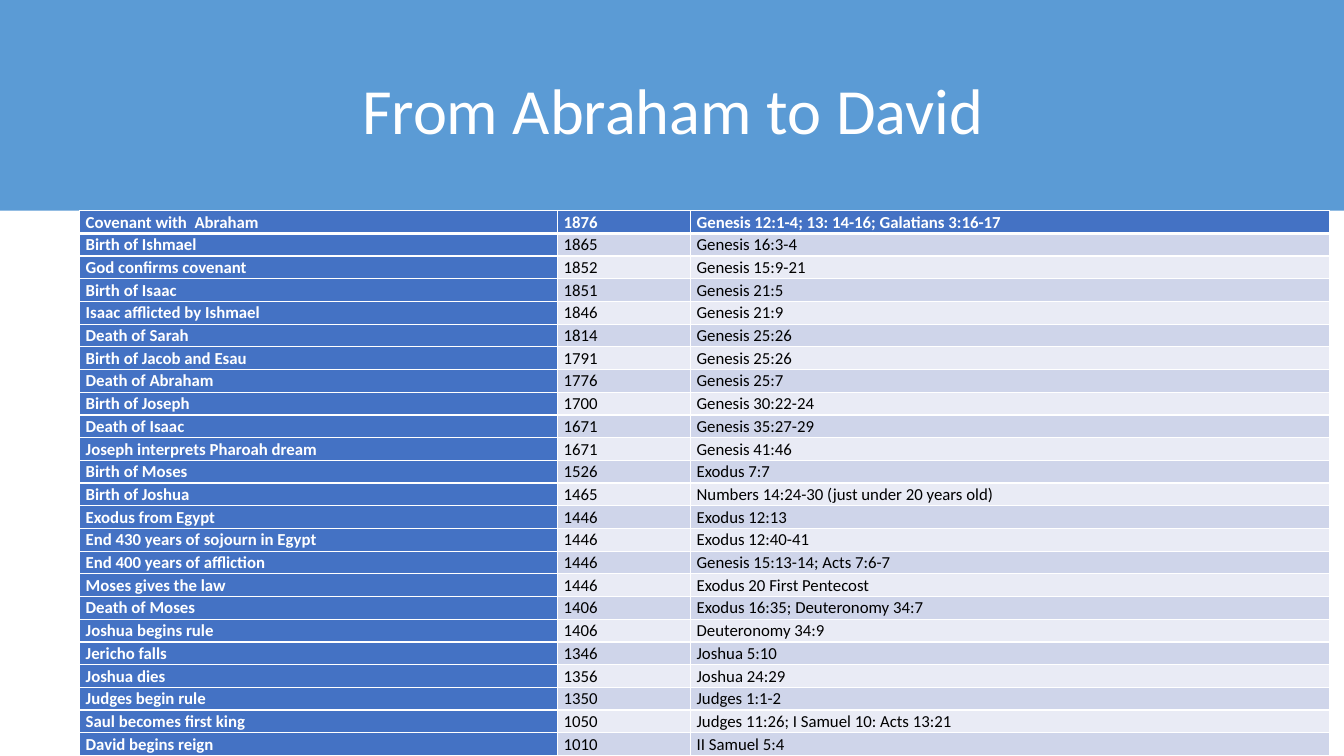
from lxml.etree import SubElement
from pptx import Presentation
from pptx.dml.color import RGBColor
from pptx.enum.shapes import MSO_SHAPE
from pptx.enum.text import MSO_ANCHOR, PP_ALIGN
from pptx.oxml.ns import qn
from pptx.util import Inches, Pt

SKY = RGBColor(0x5B, 0x9B, 0xD5)
BLUE = RGBColor(0x44, 0x72, 0xC4)
DARK_BAND = RGBColor(0xCF, 0xD5, 0xEA)
LIGHT_BAND = RGBColor(0xE9, 0xEB, 0xF5)
WHITE = RGBColor(0xFF, 0xFF, 0xFF)
BLACK = RGBColor(0x00, 0x00, 0x00)
FONT = "Calibri"

COLUMN_WIDTHS = (4.74, 1.32, 6.34)
TABLE_HEIGHT = 5.41
EVENTS = [
    ("Covenant with  Abraham", "1876", "Genesis 12:1-4; 13: 14-16; Galatians 3:16-17"),
    ("Birth of Ishmael", "1865", "Genesis 16:3-4"),
    ("God confirms covenant", "1852", "Genesis 15:9-21"),
    ("Birth of Isaac", "1851", "Genesis 21:5"),
    ("Isaac afflicted by Ishmael", "1846", "Genesis 21:9"),
    ("Death of Sarah", "1814", "Genesis 25:26"),
    ("Birth of Jacob and Esau", "1791", "Genesis 25:26"),
    ("Death of Abraham", "1776", "Genesis 25:7"),
    ("Birth of Joseph", "1700", "Genesis 30:22-24"),
    ("Death of Isaac", "1671", "Genesis 35:27-29"),
    ("Joseph interprets Pharoah dream", "1671", "Genesis 41:46"),
    ("Birth of Moses", "1526", "Exodus 7:7"),
    ("Birth of Joshua", "1465", "Numbers 14:24-30 (just under 20 years old)"),
    ("Exodus from Egypt", "1446", "Exodus 12:13"),
    ("End 430 years of sojourn in Egypt", "1446", "Exodus 12:40-41"),
    ("End 400 years of affliction", "1446", "Genesis 15:13-14; Acts 7:6-7"),
    ("Moses gives the law", "1446", "Exodus 20 First Pentecost"),
    ("Death of Moses", "1406", "Exodus 16:35; Deuteronomy 34:7"),
    ("Joshua begins rule", "1406", "Deuteronomy 34:9"),
    ("Jericho falls", "1346", "Joshua 5:10"),
    ("Joshua dies", "1356", "Joshua 24:29"),
    ("Judges begin rule", "1350", "Judges 1:1-2"),
    ("Saul becomes first king", "1050", "Judges 11:26; I Samuel 10: Acts 13:21"),
    ("David begins reign", "1010", "II Samuel 5:4"),
]


def style_paragraph(paragraph, size, color, bold, spacing):
    paragraph.font.name = FONT
    paragraph.font.size = Pt(size)
    paragraph.font.color.rgb = color
    paragraph.font.bold = bold
    paragraph.line_spacing = spacing


def add_banner(slide):
    banner = slide.shapes.add_shape(
        MSO_SHAPE.RECTANGLE, 0, 0, Inches(13.33), Inches(2.09))
    banner.shadow.inherit = False
    banner.fill.solid()
    banner.fill.fore_color.rgb = SKY
    banner.line.fill.background()
    # Send the banner behind the title
    slide.shapes._spTree.insert(2, banner._element)


def set_title(slide, text):
    title = slide.shapes.title
    title.left, title.top = Inches(0.92), Inches(0.4)
    title.width, title.height = Inches(11.5), Inches(1.45)
    title.text_frame.text = text
    title.text_frame.vertical_anchor = MSO_ANCHOR.MIDDLE
    heading = title.text_frame.paragraphs[0]
    heading.alignment = PP_ALIGN.CENTER
    style_paragraph(heading, 46, WHITE, False, 0.9)


def set_borders(cell, top, bottom):
    """Draw white cell borders; must run before the cell is filled."""
    properties = cell._tc.get_or_add_tcPr()
    for side, width in (("L", 1), ("R", 1), ("T", top), ("B", bottom)):
        line = SubElement(properties, qn(f"a:ln{side}"), w=str(Pt(width)))
        fill = SubElement(line, qn("a:solidFill"))
        SubElement(fill, qn("a:srgbClr"), val=str(WHITE))


def fill_cell(cell, text, row, column):
    emphasized = row == 0 or column == 0
    band = DARK_BAND if row % 2 else LIGHT_BAND
    cell.text = text
    cell.margin_left = cell.margin_right = Inches(0.06)
    cell.margin_top = cell.margin_bottom = 0
    set_borders(cell, top=3 if row == 1 else 1, bottom=3 if row == 0 else 1)
    cell.fill.solid()
    cell.fill.fore_color.rgb = BLUE if emphasized else band
    style_paragraph(cell.text_frame.paragraphs[0], 12,
                    WHITE if emphasized else BLACK, emphasized, 1.07)


def add_timeline(slide):
    timeline = slide.shapes.add_table(
        len(EVENTS), len(COLUMN_WIDTHS), Inches(0.79), Inches(2.09),
        Inches(sum(COLUMN_WIDTHS)), Inches(TABLE_HEIGHT)).table
    for column, width in zip(timeline.columns, COLUMN_WIDTHS):
        column.width = Inches(width)
    for row, event in enumerate(EVENTS):
        timeline.rows[row].height = Inches(TABLE_HEIGHT / len(EVENTS))
        for column, text in enumerate(event):
            fill_cell(timeline.cell(row, column), text, row, column)


def main():
    presentation = Presentation()
    presentation.slide_width = Inches(13.33)
    presentation.slide_height = Inches(7.5)
    slide = presentation.slides.add_slide(presentation.slide_layouts[5])
    add_banner(slide)
    set_title(slide, "From Abraham to David")
    add_timeline(slide)
    presentation.save("out.pptx")


if __name__ == "__main__":
    main()
